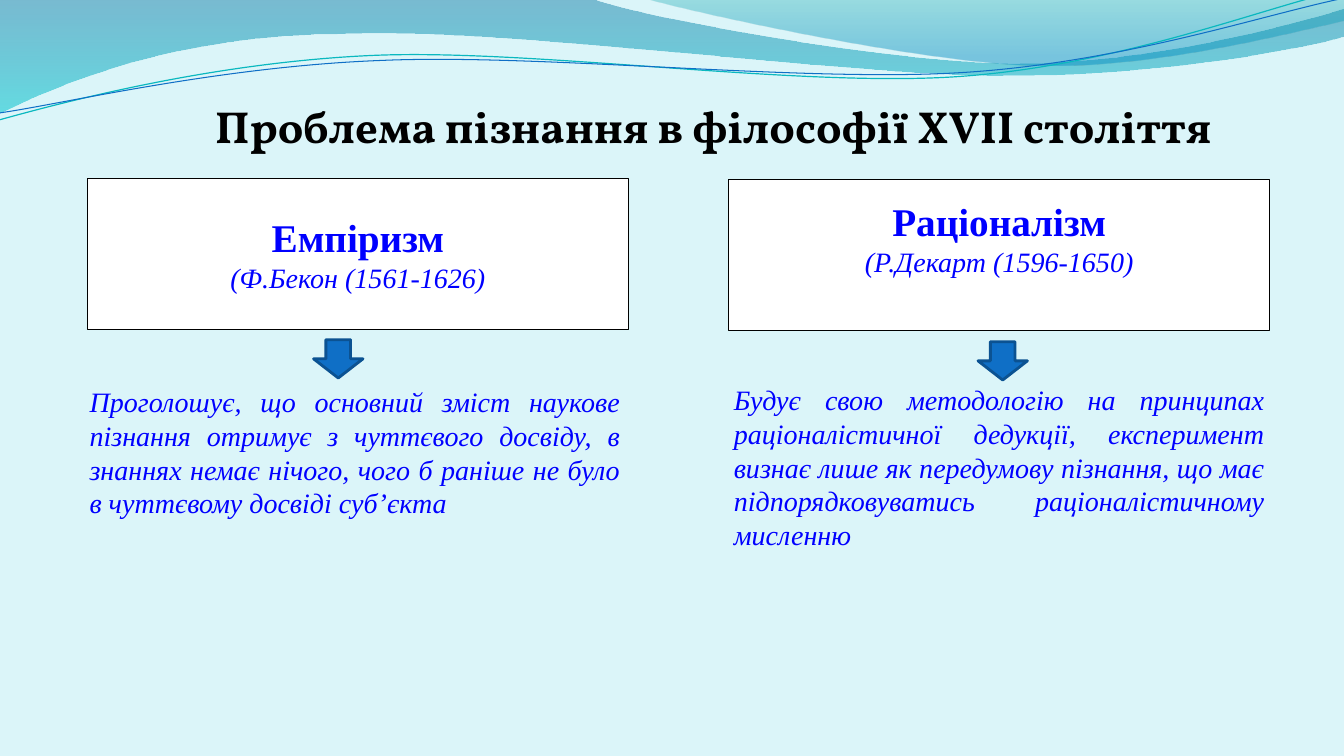
from lxml.etree import SubElement
from pptx import Presentation
from pptx.dml.color import RGBColor
from pptx.enum.shapes import MSO_SHAPE
from pptx.enum.text import MSO_ANCHOR, PP_ALIGN
from pptx.oxml.ns import qn
from pptx.util import Inches, Pt

COLORS = {
    "background": "DBF5F9", "title": "000000", "text": "0000FF",
    "box": "FFFFFF", "border": "000000",
    "arrow": "0F6FC6", "arrow_edge": "0B5292",
    "teal_line": "0AB8BF", "blue_line": "0F6FC6",
    "deep": "0074A1", "aqua": "00C6CF", "green": "00A1A9", "sky": "008BBF",
}
BODY_FONT = "Times New Roman"

UPPER_WAVE = [
    (0, -0.01), (5.87, -0.01),
    (6.34, 0.17, 8.85, 0.63, 10.11, 0.63), (11.38, 0.63, 12.78, 0.26, 13.33, 0.09),
    (13.35, 0.36),
    (13.11, 0.44, 11.6, 0.76, 9.94, 0.75), (8.29, 0.75, 5.09, 0.28, 3.43, 0.34),
    (1.72, 0.35, 0.61, 0.83, -0.01, 1.13), (0, -0.01),
]
RIGHT_WAVE = [
    (6.39, -0.01),
    (6.79, 0.11, 9.09, 0.62, 10.25, 0.65), (11.41, 0.69, 12.82, 0.32, 13.33, 0.21),
    (13.33, 0), (6.39, -0.01),
]
TEAL_CURVE = [
    (-0.01, 1.19), (0.64, 1.01, 2.11, 0.62, 3.69, 0.55),
    (5.27, 0.48, 7.9, 0.87, 9.5, 0.76), (11.1, 0.65, 12.52, 0.08, 13.31, -0.1),
]
BLUE_CURVE = [
    (0, 1.12), (0.63, 1.03, 2.18, 0.66, 3.78, 0.6),
    (5.37, 0.53, 7.96, 0.82, 9.55, 0.72), (11.15, 0.62, 12.55, 0.14, 13.34, -0.02),
]


def color(name):
    """Return the named colour."""
    return RGBColor.from_string(COLORS[name])


def bend(outline, segments):
    """Merge each three lines of a six-number segment into a cubic curve."""
    lines = iter(list(outline.element.iter(qn("a:lnTo"))))
    for segment in segments[1:]:
        first = next(lines)
        if len(segment) == 2:
            continue
        parent = first.getparent()
        cubic = SubElement(parent, qn("a:cubicBezTo"))
        first.addprevious(cubic)
        for line in (first, next(lines), next(lines)):
            cubic.append(line[0])
            parent.remove(line)


def add_outline(slide, segments, close):
    """Draw a freeform through straight and cubic segments."""
    points = [
        (Inches(x), Inches(y))
        for segment in segments for x, y in zip(segment[::2], segment[1::2])
    ]
    builder = slide.shapes.build_freeform(*points[0])
    builder.add_line_segments(points[1:], close=close)
    outline = builder.convert_to_shape()
    outline.shadow.inherit = False
    bend(outline, segments)
    return outline


def add_wave(slide, segments, stops):
    """Add a wave with a translucent gradient running downwards."""
    wave = add_outline(slide, segments, True)
    wave.line.fill.background()
    wave.fill.gradient()
    wave.fill.gradient_angle = 270
    for stop, (position, name, opacity) in zip(wave.fill.gradient_stops, stops):
        stop.position = position
        stop.color.rgb = color(name)
    for tint, (position, name, opacity) in zip(wave.element.iter(qn("a:srgbClr")), stops):
        SubElement(tint, qn("a:alpha")).set("val", str(opacity * 1000))


def add_curve(slide, segments, name, width):
    """Add an open thin curve."""
    curve = add_outline(slide, segments, False)
    curve.fill.background()
    curve.line.color.rgb = color(name)
    curve.line.width = Pt(width)


def add_run(paragraph, text, size, name="text", font=BODY_FONT, bold=False, italic=False):
    """Append a formatted run."""
    run = paragraph.add_run()
    run.text = text
    run.font.size = Pt(size)
    run.font.name = font
    run.font.bold = bold
    run.font.italic = italic
    run.font.color.rgb = color(name)


def add_text(slide, area, text, align, **style):
    """Add a wrapping text box with one paragraph."""
    frame = slide.shapes.add_textbox(*map(Inches, area)).text_frame
    frame.word_wrap = True
    paragraph = frame.paragraphs[0]
    paragraph.alignment = align
    add_run(paragraph, text, **style)


def add_block(slide, kind, area, fill, edge, width):
    """Add a filled and outlined preset shape."""
    block = slide.shapes.add_shape(kind, *map(Inches, area))
    block.shadow.inherit = False
    block.fill.solid()
    block.fill.fore_color.rgb = color(fill)
    block.line.color.rgb = color(edge)
    block.line.width = Pt(width)
    return block


def add_school(slide, box, arrow, body, name, thinker, thesis, bottom_inset):
    """Add a school of thought: its box, arrow and thesis."""
    heading = add_block(slide, MSO_SHAPE.RECTANGLE, (*box, 5.36, 1.5), "box", "border", 0.75)
    frame = heading.text_frame
    frame.word_wrap = True
    frame.vertical_anchor = MSO_ANCHOR.MIDDLE
    frame.margin_bottom = Inches(bottom_inset)
    school_line, thinker_line = frame.paragraphs[0], frame.add_paragraph()
    school_line.alignment = thinker_line.alignment = PP_ALIGN.CENTER
    add_run(school_line, name, 28, bold=True)
    add_run(thinker_line, thinker, 20, italic=True)
    add_text(slide, (*body, 5.46, 2.34), thesis, PP_ALIGN.JUSTIFY, size=20, italic=True)
    add_block(slide, MSO_SHAPE.DOWN_ARROW, (*arrow, 0.49, 0.38), "arrow", "arrow_edge", 2)


def main():
    """Build and save the slide."""
    deck = Presentation()
    deck.slide_width, deck.slide_height = Inches(13.33), Inches(7.5)
    slide = deck.slides.add_slide(deck.slide_layouts[6])
    slide.background.fill.solid()
    slide.background.fill.fore_color.rgb = color("background")

    add_wave(slide, UPPER_WAVE, [(0, "deep", 45), (1, "aqua", 55)])
    add_wave(slide, RIGHT_WAVE, [(0, "green", 30), (0.8, "sky", 45)])
    add_curve(slide, TEAL_CURVE, "teal_line", 0.85)
    add_curve(slide, BLUE_CURVE, "blue_line", 0.75)

    add_text(slide, (1.45, 0.93, 11.26, 0.63), "Проблема пізнання в філософії XVII століття",
             PP_ALIGN.CENTER, size=32, name="title", font="Vollkorn", bold=True)
    add_school(
        slide, (0.87, 1.77), (3.11, 3.37), (0.79, 3.77),
        "Емпіризм", "(Ф.Бекон (1561-1626)",
        "Проголошує, що основний зміст наукове пізнання отримує з чуттєвого досвіду, "
        "в знаннях немає нічого, чого б раніше не було в чуттєвому досвіді суб’єкта",
        0.05,
    )
    add_school(
        slide, (7.23, 1.78), (9.7, 3.39), (7.18, 3.75),
        "Раціоналізм", "(Р.Декарт (1596-1650)",
        "Будує свою методологію на принципах раціоналістичної дедукції, експеримент "
        "визнає лише як передумову пізнання, що має підпорядковуватись "
        "раціоналістичному мисленню",
        0.4,
    )
    deck.save("out.pptx")


if __name__ == "__main__":
    main()
